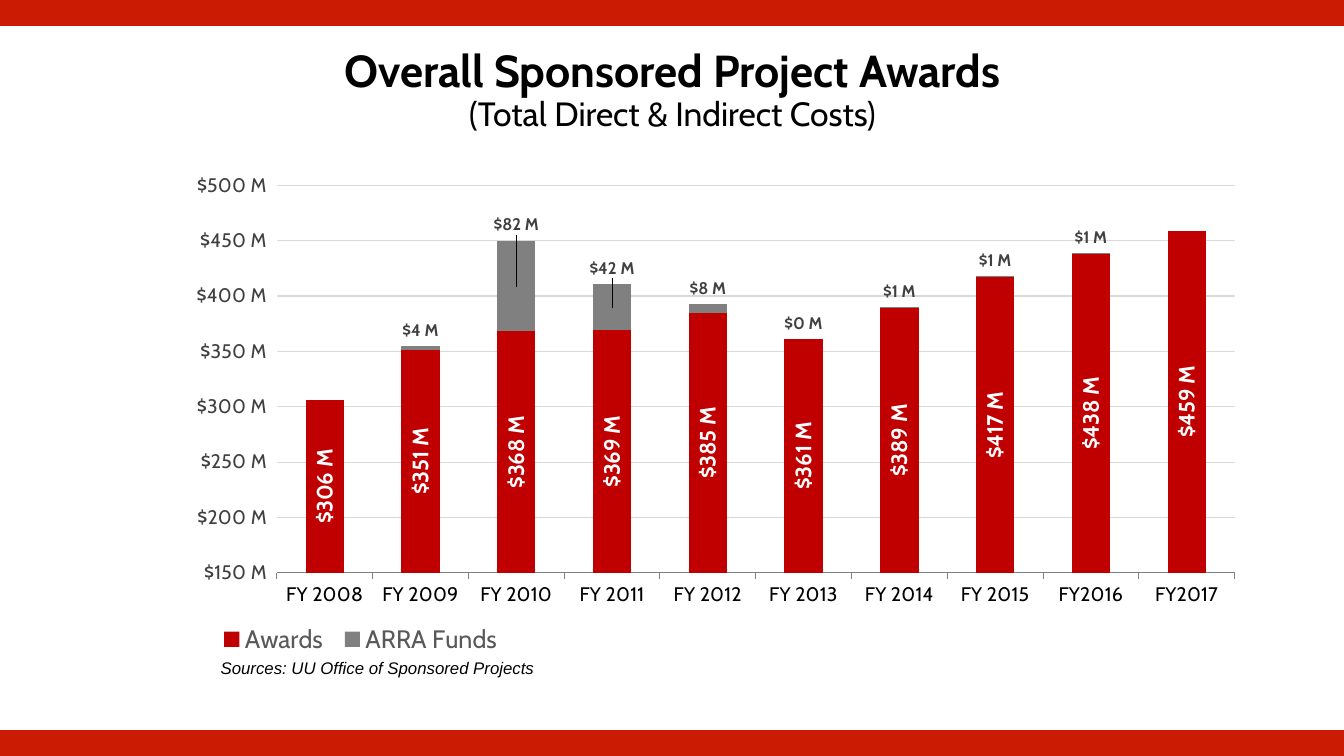
from dataclasses import dataclass

from lxml.etree import SubElement
from pptx import Presentation
from pptx.chart.data import CategoryChartData
from pptx.dml.color import RGBColor
from pptx.enum.chart import XL_CHART_TYPE as ChartType
from pptx.enum.chart import XL_LABEL_POSITION as LabelPosition
from pptx.enum.chart import XL_LEGEND_POSITION as LegendPosition
from pptx.enum.chart import XL_TICK_MARK as TickMark
from pptx.enum.shapes import MSO_SHAPE as Preset
from pptx.enum.text import MSO_ANCHOR as Anchor
from pptx.enum.text import PP_ALIGN as Align
from pptx.oxml import parse_xml
from pptx.oxml.ns import nsdecls, qn
from pptx.util import Inches, Pt


@dataclass(frozen=True)
class Theme:
    band: str = "CC1B03"
    black: str = "000000"
    white: str = "FFFFFF"
    dark: str = "404040"
    legend: str = "595959"
    axis: str = "808080"
    grid: str = "D9D9D9"
    display: str = "Cabin"
    source: str = "Arial"
    title_size: int = 32
    subtitle_size: int = 24
    legend_size: int = 18
    award_size: int = 16
    axis_size: int = 14
    small_size: int = 12


@dataclass(frozen=True)
class Funding:
    name: str
    color: str
    millions: tuple[int | None, ...]


THEME = Theme()
MILLION = 1_000_000
NUMBER_FORMAT = '"$"0,,\\ "M"'
AXIS_MIN, AXIS_MAX, AXIS_STEP = 150, 500, 50
PLOT_HEIGHT = 0.707  # share of the chart height
LABEL_LIFT = 0.028  # gap between bar top and label centre

YEARS = [f"FY {year}" for year in range(2008, 2016)] + ["FY2016", "FY2017"]
AWARDS = Funding("Awards", "C00000",
                 (306, 351, 368, 369, 385, 361, 389, 417, 438, 459))
ARRA = Funding("ARRA Funds", "808080",
               (None, 4, 82, 42, 8, 0, 1, 1, 1, None))


def format_font(font, *, size: int, color: str, name: str = THEME.display,
                bold: bool = False, italic: bool = False) -> None:
    font.name, font.size = name, Pt(size)
    font.bold, font.italic = bold, italic
    font.color.rgb = RGBColor.from_string(color)


def add_run(paragraph, text: str, **font_format) -> None:
    run = paragraph.add_run()
    run.text = text
    format_font(run.font, **font_format)


def add_text_box(slide, left: float, top: float, width: float, height: float):
    box = slide.shapes.add_textbox(*map(Inches, (left, top, width, height)))
    box.text_frame.word_wrap = True
    return box.text_frame


def add_band(slide, top: float) -> None:
    band = slide.shapes.add_shape(Preset.RECTANGLE, 0, Inches(top),
                                  Inches(13.33), Inches(0.25))
    band.shadow.inherit = False
    band.fill.solid()
    band.fill.fore_color.rgb = RGBColor.from_string(THEME.band)
    band.line.color.rgb = RGBColor.from_string(THEME.band)
    band.line.width = Pt(1)


def make_layout(**settings: object):
    """Build a manual chart layout from its settings, in schema order."""
    layout = parse_xml(f"<c:layout {nsdecls('c')}/>")
    manual = SubElement(layout, qn("c:manualLayout"))
    for tag, value in settings.items():
        SubElement(manual, qn(f"c:{tag}")).set("val", str(value))
    return layout


def place_part(parent, layout, after: str | None = None) -> None:
    """Give a chart part its layout, following the named child if any."""
    for old in parent.findall(qn("c:layout")):
        parent.remove(old)
    if after is None:
        parent.insert(0, layout)
    else:
        parent.find(qn(after)).addnext(layout)


def format_axes(chart) -> None:
    category_axis, value_axis = chart.category_axis, chart.value_axis
    category_axis.major_tick_mark = value_axis.major_tick_mark = TickMark.OUTSIDE
    category_axis.format.line.color.rgb = RGBColor.from_string(THEME.axis)
    format_font(category_axis.tick_labels.font, size=THEME.axis_size,
                color=THEME.black)

    value_axis.minimum_scale = AXIS_MIN * MILLION
    value_axis.maximum_scale = AXIS_MAX * MILLION
    value_axis.major_unit = AXIS_STEP * MILLION
    value_axis.format.line.fill.background()
    gridline = value_axis.major_gridlines.format.line
    gridline.color.rgb = RGBColor.from_string(THEME.grid)
    gridline.width = Pt(0.75)
    tick_labels = value_axis.tick_labels
    tick_labels.number_format = NUMBER_FORMAT
    tick_labels.number_format_is_linked = False
    format_font(tick_labels.font, size=THEME.axis_size, color=THEME.dark)


def label_series(series, *, size: int, color: str) -> None:
    labels = series.data_labels
    labels.show_value = True
    labels.number_format = NUMBER_FORMAT
    labels.number_format_is_linked = False
    labels.position = LabelPosition.CENTER
    format_font(labels.font, size=size, color=color, bold=True)


def lift_labels(series, funding: Funding) -> None:
    """Move each label from the middle of its bar to just above it."""
    for index, value in enumerate(funding.millions):
        if value is None:
            continue
        label = series.points[index].data_label
        label.position = LabelPosition.CENTER
        format_font(label.font, size=THEME.small_size, color=THEME.dark, bold=True)
        half_bar = value / (AXIS_MAX - AXIS_MIN) * PLOT_HEIGHT / 2
        element = series.data_labels._element.findall(qn("c:dLbl"))[-1]
        place_part(element, make_layout(x=0, y=-round(half_bar + LABEL_LIFT, 3)),
                   after="c:idx")


def add_awards_chart(slide) -> None:
    data = CategoryChartData(number_format=NUMBER_FORMAT)
    data.categories = YEARS
    for funding in (AWARDS, ARRA):
        data.add_series(funding.name, [None if value is None else value * MILLION
                                       for value in funding.millions])
    chart = slide.shapes.add_chart(
        ChartType.COLUMN_STACKED, Inches(1.95), Inches(1.12),
        Inches(10.3), Inches(5.44), data).chart
    chart.has_title = False
    format_font(chart.font, size=10, color=THEME.black)
    format_axes(chart)

    # Bars and their labels
    plot = chart.plots[0]
    plot.gap_width, plot.overlap, plot.vary_by_categories = 150, 100, False
    awards, arra = plot.series
    for series, funding in ((awards, AWARDS), (arra, ARRA)):
        series.format.fill.solid()
        series.format.fill.fore_color.rgb = RGBColor.from_string(funding.color)
    label_series(awards, size=THEME.award_size, color=THEME.white)
    body = awards.data_labels._element.find(f"{qn('c:txPr')}/{qn('a:bodyPr')}")
    body.set("rot", "-5400000")
    body.set("vert", "horz")
    label_series(arra, size=THEME.small_size, color=THEME.dark)
    lift_labels(arra, ARRA)

    # Legend and plot area
    chart.has_legend = True
    legend = chart.legend
    legend.position = LegendPosition.BOTTOM
    legend.include_in_layout = False
    format_font(legend.font, size=THEME.legend_size, color=THEME.legend)
    place_part(legend._element,
               make_layout(xMode="edge", yMode="edge", x=0.01, y=0.92, w=0.29, h=0.08),
               after="c:legendPos")
    place_part(chart._chartSpace.chart.plotArea,
               make_layout(layoutTarget="inner", xMode="edge", yMode="edge",
                           x=0.081, y=0.132, w=0.926, h=PLOT_HEIGHT))


def main() -> None:
    presentation = Presentation()
    presentation.slide_width, presentation.slide_height = Inches(13.33), Inches(7.5)
    slide = presentation.slides.add_slide(presentation.slide_layouts[6])

    # Top and bottom bands
    for top in (0, 7.25):
        add_band(slide, top)

    # Source line
    source = add_text_box(slide, 2.09, 6.48, 3.66, 0.3)
    add_run(source.paragraphs[0], "Sources: UU Office of Sponsored Projects",
            size=THEME.small_size, color=THEME.black, name=THEME.source, italic=True)

    add_awards_chart(slide)

    # Title
    title = add_text_box(slide, 0.92, 0.18, 11.5, 1.45)
    title.vertical_anchor = Anchor.MIDDLE
    paragraph = title.paragraphs[0]
    paragraph.alignment, paragraph.line_spacing = Align.CENTER, 0.9
    add_run(paragraph, "Overall Sponsored Project Awards",
            size=THEME.title_size, color=THEME.black, bold=True)
    paragraph.add_line_break()
    add_run(paragraph, "(Total Direct & Indirect Costs)",
            size=THEME.subtitle_size, color=THEME.black)

    presentation.save("out.pptx")


if __name__ == "__main__":
    main()
